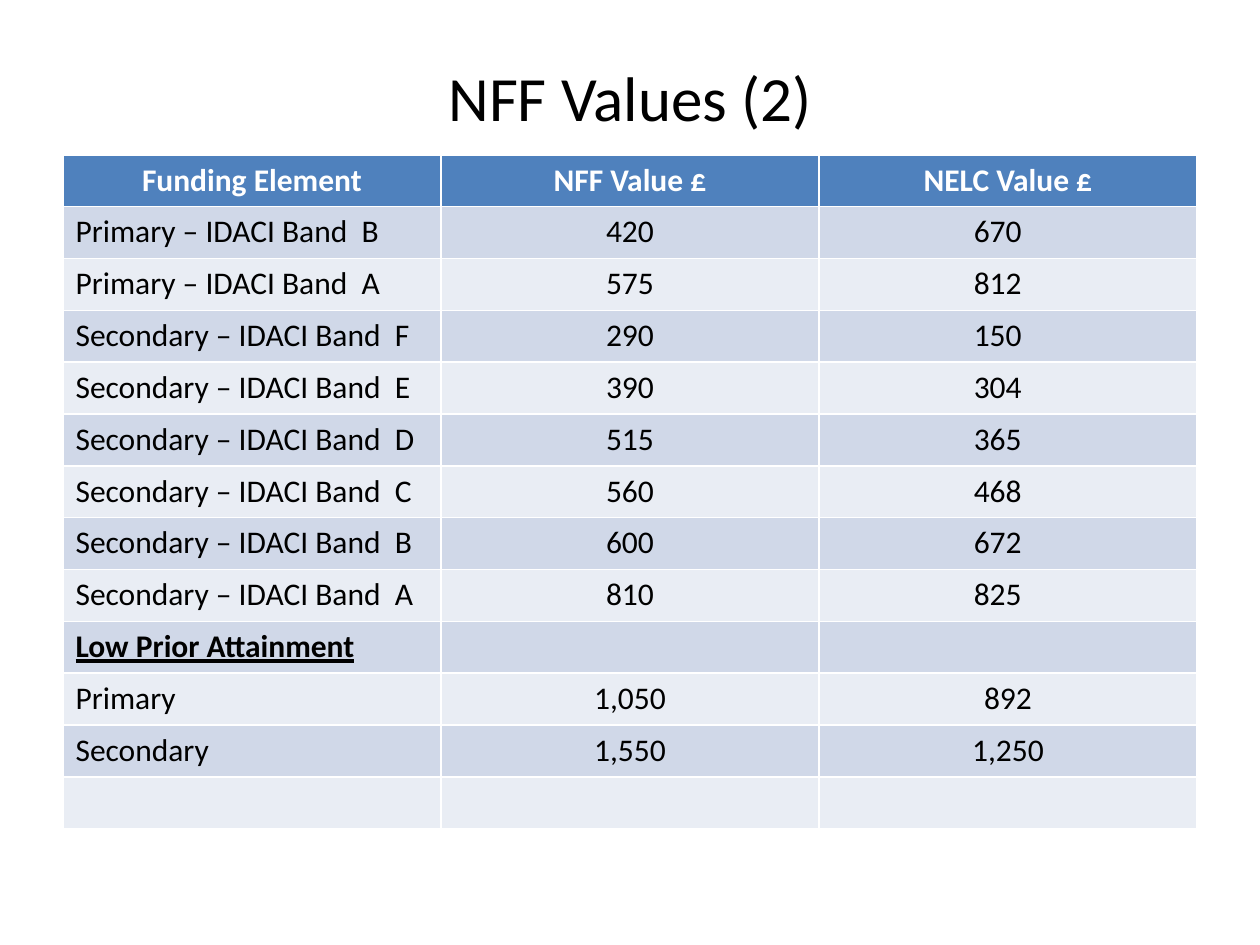
import pptx
import pptx.util
import pptx.dml.color
import pptx.enum.text

Cm, Pt = pptx.util.Cm, pptx.util.Pt
RGBColor = pptx.dml.color.RGBColor
PP_ALIGN = pptx.enum.text.PP_ALIGN
MSO_ANCHOR = pptx.enum.text.MSO_ANCHOR

BLACK = RGBColor(0x00, 0x00, 0x00)
WHITE = RGBColor(0xFF, 0xFF, 0xFF)
HEADER = RGBColor(0x4F, 0x81, 0xBD)
BANDS = [RGBColor(0xE9, 0xED, 0xF4), RGBColor(0xD0, 0xD8, 0xE8)]

ROWS = [
    ("Funding Element", "NFF Value £", "NELC Value £"),
    ("Primary – IDACI Band  B", "420", "670"),
    ("Primary – IDACI Band  A", "575", "812"),
    ("Secondary – IDACI Band  F", "290", "150"),
    ("Secondary – IDACI Band  E", "390", "304"),
    ("Secondary – IDACI Band  D", "515", "365"),
    ("Secondary – IDACI Band  C", "560", "468"),
    ("Secondary – IDACI Band  B", "600", "672"),
    ("Secondary – IDACI Band  A", "810", "825"),
    ("Low Prior Attainment", "", ""),
    ("Primary", "1,050", "892"),
    ("Secondary", "1,550", "1,250"),
    ("", "", ""),
]
SUBHEADING_ROW = 9


def add_text(p, text, color, **font):
    r = p.add_run()
    r.text = text
    r.font.color.rgb = color
    for name, value in {"name": "Calibri", **font}.items():
        setattr(r.font, name, value)


prs = pptx.Presentation()
prs.slide_width, prs.slide_height = Cm(25.4), Cm(19.05)
s = prs.slides.add_slide(prs.slide_layouts[5])

# Title
title = s.shapes.title
title.left, title.top, title.width, title.height = Cm(1.27), Cm(0.76), Cm(22.86), Cm(2.36)
tf = title.text_frame
tf.vertical_anchor = MSO_ANCHOR.MIDDLE
p = tf.paragraphs[0]
p.alignment = PP_ALIGN.CENTER
add_text(p, "NFF Values (2)", BLACK, size=Pt(36))

# Funding table; the table style supplies the white cell borders
table = s.shapes.add_table(len(ROWS), 3, Cm(1.27), Cm(3.12), Cm(22.86), Cm(13.59)).table
for i, row in enumerate(ROWS):
    is_header = i == 0
    for j, text in enumerate(row):
        cell = table.cell(i, j)
        cell.fill.solid()
        cell.fill.fore_color.rgb = HEADER if is_header else BANDS[i % 2]
        p = cell.text_frame.paragraphs[0]
        p.font.size = Pt(18)
        if not text:
            continue
        # NELC band values are left-aligned at an inset
        if j == 2 and 0 < i < SUBHEADING_ROW:
            cell.margin_left = Cm(3.12)
        elif is_header or j > 0:
            p.alignment = PP_ALIGN.CENTER
        is_subheading = i == SUBHEADING_ROW
        add_text(p, text, WHITE if is_header else BLACK, size=Pt(18),
                 bold=is_header or is_subheading, underline=is_subheading)

prs.save("out.pptx")
